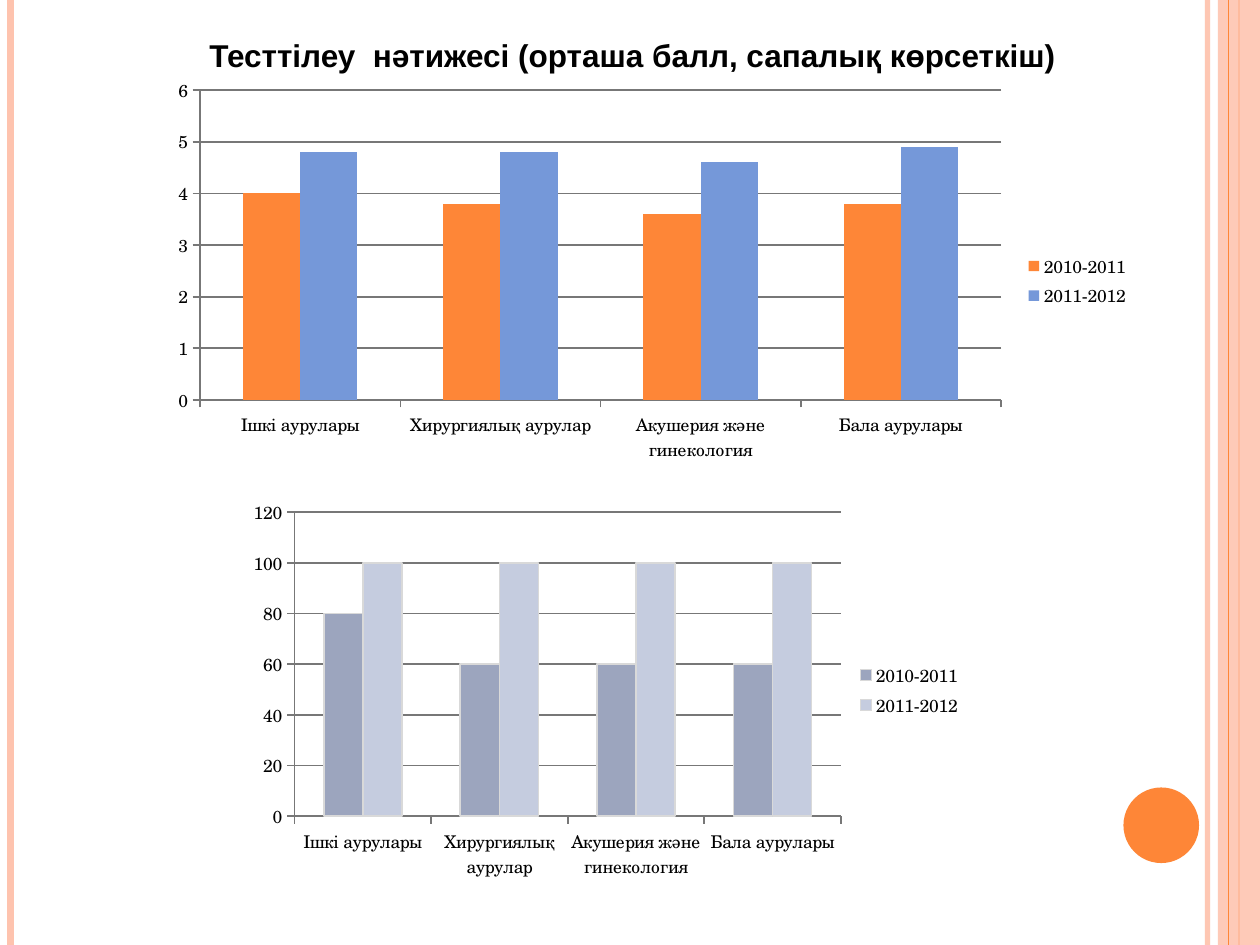
"""Build the slide comparing test results of two school years."""
import pptx
import pptx.chart.data
import pptx.dml.color
import pptx.enum.chart
import pptx.enum.shapes
import pptx.enum.text
import pptx.oxml
import pptx.oxml.ns
import pptx.util

Pt = pptx.util.Pt
COLORS = {
    "text": "000000", "accent": "FE8637", "blue": "7598D9", "peach": "FEC3AE",
    "slate": "9CA5BE", "mist": "C5CCDF", "edge": "D9D9D9", "axis": "777777",
}
YEARS = ("2010-2011", "2011-2012")
SUBJECTS = ("Ішкі аурулары", "Хирургиялық аурулар",
            "Акушерия және гинекология", "Бала аурулары")
SLIDE_HEIGHT = 540


def rgb(name):
    return pptx.dml.color.RGBColor.from_string(COLORS[name])


def apply(target, values):
    for attribute, value in values.items():
        setattr(target, attribute, value)


def fill_solid(fill, color):
    fill.solid()
    fill.fore_color.rgb = rgb(color)


def set_opacity(element, percent):
    color = next(element.iter(pptx.oxml.ns.qn("a:srgbClr")))
    alpha = pptx.oxml.parse_xml(
        f'<a:alpha {pptx.oxml.ns.nsdecls("a")} val="{percent * 1000}"/>')
    color.append(alpha)


def add_stripe(slide, x, color, width, opacity=100):
    stripe = slide.shapes.add_connector(
        pptx.enum.shapes.MSO_CONNECTOR.STRAIGHT, Pt(x), Pt(0), Pt(x), Pt(SLIDE_HEIGHT))
    stripe.line.color.rgb = rgb(color)
    stripe.line.width = Pt(width)
    properties = stripe._element.spPr
    if opacity < 100:
        set_opacity(properties, opacity)
    properties.append(pptx.oxml.parse_xml(
        f'<a:effectLst {pptx.oxml.ns.nsdecls("a")}/>'))


def add_block(slide, preset, box, color, opacity=100):
    block = slide.shapes.add_shape(preset, *map(Pt, box))
    block.shadow.inherit = False
    fill_solid(block.fill, color)
    block.line.fill.background()
    if opacity < 100:
        set_opacity(block._element.spPr, opacity)


def add_title(slide, words, box):
    title = slide.shapes.title
    apply(title, dict(zip(("left", "top", "width", "height"), map(Pt, box))))
    frame = title.text_frame
    frame.text = words
    apply(frame, {
        "word_wrap": True,
        "auto_size": pptx.enum.text.MSO_AUTO_SIZE.NONE,
        "vertical_anchor": pptx.enum.text.MSO_ANCHOR.MIDDLE,
        "margin_left": 0, "margin_right": 0,
    })
    paragraph = frame.paragraphs[0]
    paragraph.alignment = pptx.enum.text.PP_ALIGN.CENTER
    font = paragraph.runs[0].font
    apply(font, {"name": "Arial", "size": Pt(18), "bold": True})
    font.color.rgb = rgb("text")


def set_plot_area(chart, area):
    plot_area = chart._chartSpace.chart.plotArea
    for layout in plot_area.findall(pptx.oxml.ns.qn("c:layout")):
        plot_area.remove(layout)
    sizes = "".join(f'<c:{tag} val="{value}"/>' for tag, value in zip("xywh", area))
    plot_area.insert(0, pptx.oxml.parse_xml(
        f'<c:layout {pptx.oxml.ns.nsdecls("c")}><c:manualLayout>'
        '<c:layoutTarget val="inner"/><c:xMode val="edge"/><c:yMode val="edge"/>'
        f'{sizes}</c:manualLayout></c:layout>'))


def style_axis_line(line):
    line.color.rgb = rgb("axis")
    line.width = Pt(1)


def add_results(slide, box, area, results, fills, scale_top, step, edge=None):
    data = pptx.chart.data.CategoryChartData()
    data.categories = SUBJECTS
    for year, values in zip(YEARS, results):
        data.add_series(year, values)
    chart = slide.shapes.add_chart(
        pptx.enum.chart.XL_CHART_TYPE.COLUMN_CLUSTERED, *map(Pt, box), data).chart
    apply(chart, {"has_title": False, "has_legend": True})
    apply(chart.font, {"name": "TeX Gyre Schola", "size": Pt(10)})
    chart.font.color.rgb = rgb("text")
    apply(chart.legend, {
        "position": pptx.enum.chart.XL_LEGEND_POSITION.RIGHT,
        "include_in_layout": False,
    })
    apply(chart.plots[0], {"gap_width": 150, "overlap": 0, "vary_by_categories": False})
    for series, color in zip(chart.plots[0].series, fills):
        fill_solid(series.format.fill, color)
        if edge:
            series.format.line.color.rgb = rgb(edge)
            series.format.line.width = Pt(1)
    for axis in (chart.category_axis, chart.value_axis):
        axis.major_tick_mark = pptx.enum.chart.XL_TICK_MARK.OUTSIDE
        style_axis_line(axis.format.line)
    apply(chart.value_axis, {
        "minimum_scale": 0, "maximum_scale": scale_top, "major_unit": step,
        "has_major_gridlines": True,
    })
    style_axis_line(chart.value_axis.major_gridlines.format.line)
    set_plot_area(chart, area)


def add_decoration(slide):
    shapes = pptx.enum.shapes.MSO_SHAPE
    add_stripe(slide, 690, "peach", 3, 93)
    add_stripe(slide, 6, "peach", 4.5)
    add_stripe(slide, 708, "accent", 1.5)
    add_block(slide, shapes.RECTANGLE, (696, 0, 24, SLIDE_HEIGHT), "peach", 87)
    add_stripe(slide, 702, "accent", 0.75)
    add_block(slide, shapes.OVAL, (642, 450, 43.2, 43.2), "accent")


def main():
    deck = pptx.Presentation()
    apply(deck, {"slide_width": Pt(720), "slide_height": Pt(SLIDE_HEIGHT)})
    slide = deck.slides.add_slide(deck.slide_layouts[5])
    add_decoration(slide)
    add_title(slide, "Тесттілеу  нәтижесі (орташа балл, сапалық көрсеткіш)",
              (60, 17, 603, 29))
    add_results(slide, (34, 44.5, 618.5, 229.5), (0.13, 0.02, 0.74, 0.78),
                ((4, 3.8, 3.6, 3.8), (4.8, 4.8, 4.6, 4.9)),
                ("accent", "blue"), 6, 1)
    add_results(slide, (134.5, 281.5, 422, 225.5), (0.08, 0.05, 0.74, 0.77),
                ((80, 60, 60, 60), (100, 100, 100, 100)),
                ("slate", "mist"), 120, 20, "edge")
    deck.save("out.pptx")


if __name__ == "__main__":
    main()
